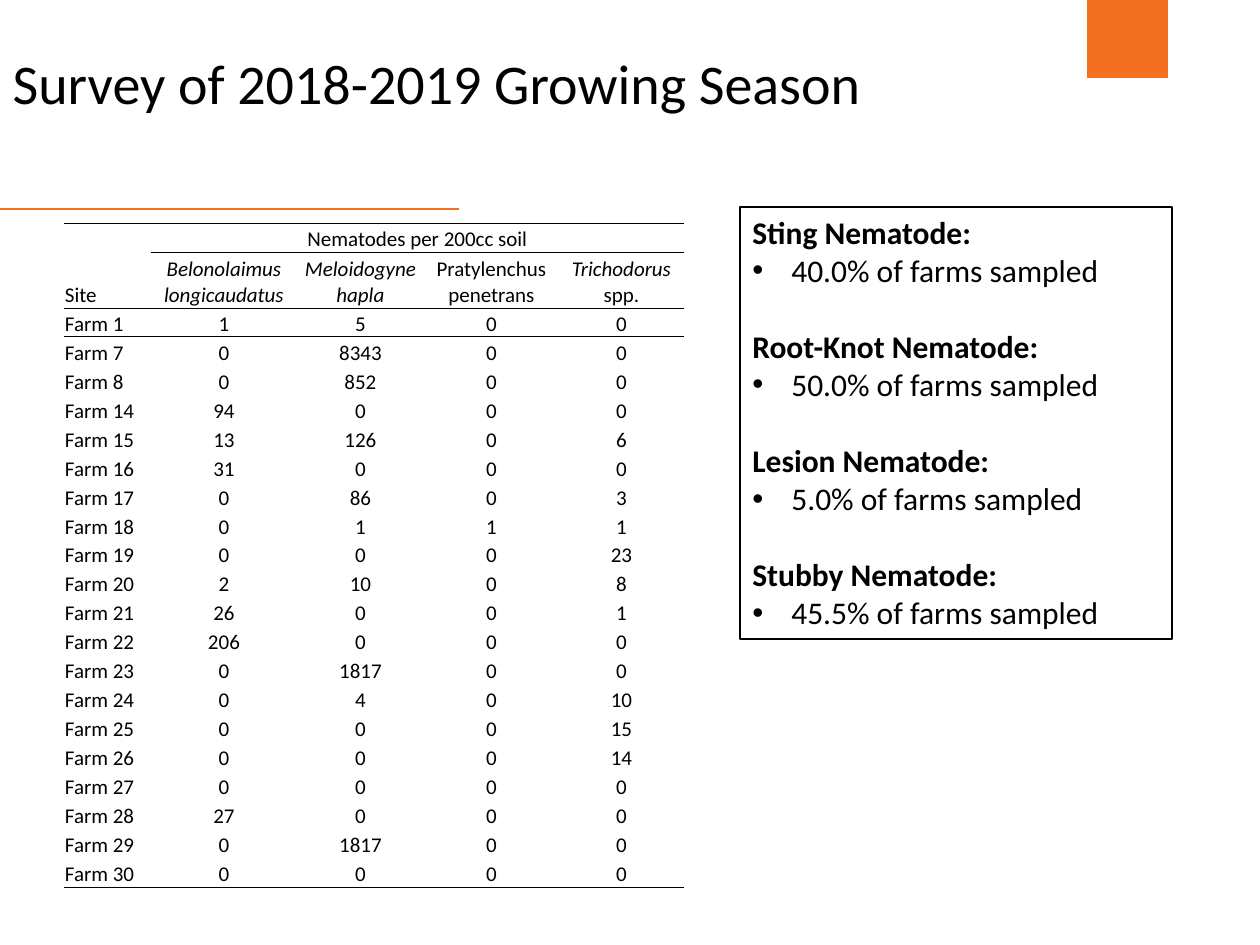
import pptx
import pptx.dml.color
import pptx.enum.shapes
import pptx.enum.text
import pptx.oxml.ns
import pptx.util
from lxml import etree

BLACK = pptx.dml.color.RGBColor(0x00, 0x00, 0x00)
ORANGE = pptx.dml.color.RGBColor(0xF3, 0x70, 0x21)
PX_PER_INCH = 126
NO_STYLE_NO_GRID = "{2D5ABB26-0587-4C30-8999-92F81FD0307C}"

ALIGN = pptx.enum.text.PP_ALIGN
ANCHOR = pptx.enum.text.MSO_ANCHOR
RECTANGLE = pptx.enum.shapes.MSO_SHAPE.RECTANGLE
qn = pptx.oxml.ns.qn

COLUMN_WIDTHS = [87, 146, 127, 135, 125]
ROW_HEIGHT, NAMES_HEIGHT = 29, 56

# Each heading is a list of (text, italic) runs
HEADINGS = [
    [("Site", False)],
    [("Belonolaimus longicaudatus", True)],
    [("Meloidogyne hapla", True)],
    [("Pratylenchus penetrans", False)],
    [("Trichodorus ", True), ("spp.", False)],
]

# Farm number, then counts in the order of the headings
COUNTS = [
    (1, 1, 5, 0, 0),
    (7, 0, 8343, 0, 0),
    (8, 0, 852, 0, 0),
    (14, 94, 0, 0, 0),
    (15, 13, 126, 0, 6),
    (16, 31, 0, 0, 0),
    (17, 0, 86, 0, 3),
    (18, 0, 1, 1, 1),
    (19, 0, 0, 0, 23),
    (20, 2, 10, 0, 8),
    (21, 26, 0, 0, 1),
    (22, 206, 0, 0, 0),
    (23, 0, 1817, 0, 0),
    (24, 0, 4, 0, 10),
    (25, 0, 0, 0, 15),
    (26, 0, 0, 0, 14),
    (27, 0, 0, 0, 0),
    (28, 27, 0, 0, 0),
    (29, 0, 1817, 0, 0),
    (30, 0, 0, 0, 0),
]

FARM_SHARES = [
    ("Sting Nematode:", "40.0% of farms sampled"),
    ("Root-Knot Nematode:", "50.0% of farms sampled"),
    ("Lesion Nematode:", "5.0% of farms sampled"),
    ("Stubby Nematode:", "45.5% of farms sampled"),
]


def px(length):
    return round(length * 914400 / PX_PER_INCH)


def assign(target, values):
    for name, value in values.items():
        setattr(target, name, value)


class SlideBuilder:
    font_name = "Calibri"

    def __init__(self, slide):
        self.slide = slide

    def add_text(self, paragraph, text, size, bold=False, italic=False):
        run = paragraph.add_run()
        run.text = text
        assign(run.font, {"name": self.font_name, "size": pptx.util.Pt(size),
                          "bold": bold, "italic": italic})
        run.font.color.rgb = BLACK

    def title(self, text, left, top, width, height):
        title = self.slide.shapes.title
        assign(title, {"left": px(left), "top": px(top),
                       "width": px(width), "height": px(height)})
        title.text_frame.vertical_anchor = ANCHOR.MIDDLE
        heading = title.text_frame.paragraphs[0]
        assign(heading, {"alignment": ALIGN.LEFT, "line_spacing": 0.9})
        self.add_text(heading, text, 32)

    def rectangle(self, left, top, width, height, fill=None, outline=None):
        box = self.slide.shapes.add_shape(
            RECTANGLE, px(left), px(top), px(width), px(height))
        box.shadow.inherit = False
        if fill is None:
            box.fill.background()
        else:
            box.fill.solid()
            box.fill.fore_color.rgb = fill
        if outline is None:
            box.line.fill.background()
        else:
            box.line.color.rgb = outline
            box.line.width = pptx.util.Pt(0.75)
        return box

    def rule(self, x1, x2, y, color):
        line = self.slide.shapes.add_connector(
            pptx.enum.shapes.MSO_CONNECTOR.STRAIGHT, px(x1), px(y), px(x2), px(y))
        line.line.color.rgb = color
        line.line.width = pptx.util.Pt(1)
        etree.SubElement(line.element.spPr, qn("a:effectLst"))

    def bullet(self, paragraph, indent):
        properties = paragraph._p.get_or_add_pPr()
        properties.set("marL", str(px(indent)))
        properties.set("indent", str(-px(indent)))
        etree.SubElement(properties, qn("a:buFont"), typeface="Arial")
        etree.SubElement(properties, qn("a:buChar"), char="•")

    def summary(self, groups, left, top, width, height):
        frame = self.rectangle(left, top, width, height, outline=BLACK).text_frame
        assign(frame, {"word_wrap": True, "vertical_anchor": ANCHOR.TOP,
                       "auto_size": pptx.enum.text.MSO_AUTO_SIZE.SHAPE_TO_FIT_TEXT})
        for index, (nematode, share) in enumerate(groups):
            heading = frame.add_paragraph() if index else frame.paragraphs[0]
            heading.alignment = ALIGN.LEFT
            if index:
                heading.space_before = pptx.util.Pt(22)
            self.add_text(heading, nematode, 18, bold=True)
            item = frame.add_paragraph()
            item.alignment = ALIGN.LEFT
            self.bullet(item, 39)
            self.add_text(item, share, 18)

    def border(self, cell, edges):
        properties = cell._tc.get_or_add_tcPr()
        for position, edge in enumerate(edges):
            line = etree.Element(qn(f"a:ln{edge}"), w=str(int(pptx.util.Pt(0.5))))
            fill = etree.SubElement(line, qn("a:solidFill"))
            etree.SubElement(fill, qn("a:srgbClr"), val=str(BLACK))
            properties.insert(position, line)

    def fill_cell(self, cell, runs, alignment, edges):
        assign(cell, {"margin_left": px(1), "margin_right": px(1), "margin_top": px(1),
                      "margin_bottom": 0, "vertical_anchor": ANCHOR.BOTTOM})
        cell.fill.background()
        self.border(cell, edges)
        paragraph = cell.text_frame.paragraphs[0]
        paragraph.alignment = alignment
        for text, italic in runs:
            self.add_text(paragraph, text, 12, italic=italic)
        if not runs:
            etree.SubElement(paragraph._p, qn("a:endParaRPr"), sz="1200")

    def table(self, rows, edges_at, left, top, widths, heights):
        frame = self.slide.shapes.add_table(
            len(rows), len(widths), px(left), px(top), px(sum(widths)), px(sum(heights)))
        table = frame.table
        assign(table, {"first_row": False, "horz_banding": False})
        table._tbl.tblPr.find(qn("a:tableStyleId")).text = NO_STYLE_NO_GRID
        for column, width in zip(table.columns, widths):
            column.width = px(width)
        for row, height in zip(table.rows, heights):
            row.height = px(height)
        for r, row in enumerate(rows):
            for c, runs in enumerate(row):
                alignment = ALIGN.CENTER if c else ALIGN.LEFT
                self.fill_cell(table.cell(r, c), runs, alignment, edges_at(r, c))
        return table


def survey_edges(row, column):
    """Rules above and below the headings, and under the last farm."""
    if row == 0:
        return "TB" if column else "T"
    if row == 1:
        return "TB" if column else "B"
    return {2: "T", len(COUNTS) + 1: "B"}.get(row, "")


def main():
    presentation = pptx.Presentation()
    assign(presentation, {"slide_width": pptx.util.Inches(10),
                          "slide_height": pptx.util.Inches(7.5)})
    builder = SlideBuilder(presentation.slides.add_slide(presentation.slide_layouts[5]))

    # Accent block and rule
    builder.rectangle(1087, -14, 81, 92, fill=ORANGE)
    builder.rule(-6, 459, 209, ORANGE)

    # Title
    builder.title("Survey of 2018-2019 Growing Season", 0, 38, 1134, 97)

    # Share of farms for each nematode
    builder.summary(FARM_SHARES, 740, 207, 432, 432)

    # Counts for each farm
    spanning = [[], [("Nematodes per 200cc soil", False)], [], [], []]
    farms = [[[(f"Farm {farm}", False)]] + [[(str(count), False)] for count in counts]
             for farm, *counts in COUNTS]
    heights = [ROW_HEIGHT, NAMES_HEIGHT] + [ROW_HEIGHT] * len(COUNTS)
    survey = builder.table([spanning, HEADINGS] + farms, survey_edges,
                           64, 223, COLUMN_WIDTHS, heights)
    survey.cell(0, 1).merge(survey.cell(0, 4))

    presentation.save("out.pptx")


if __name__ == "__main__":
    main()
